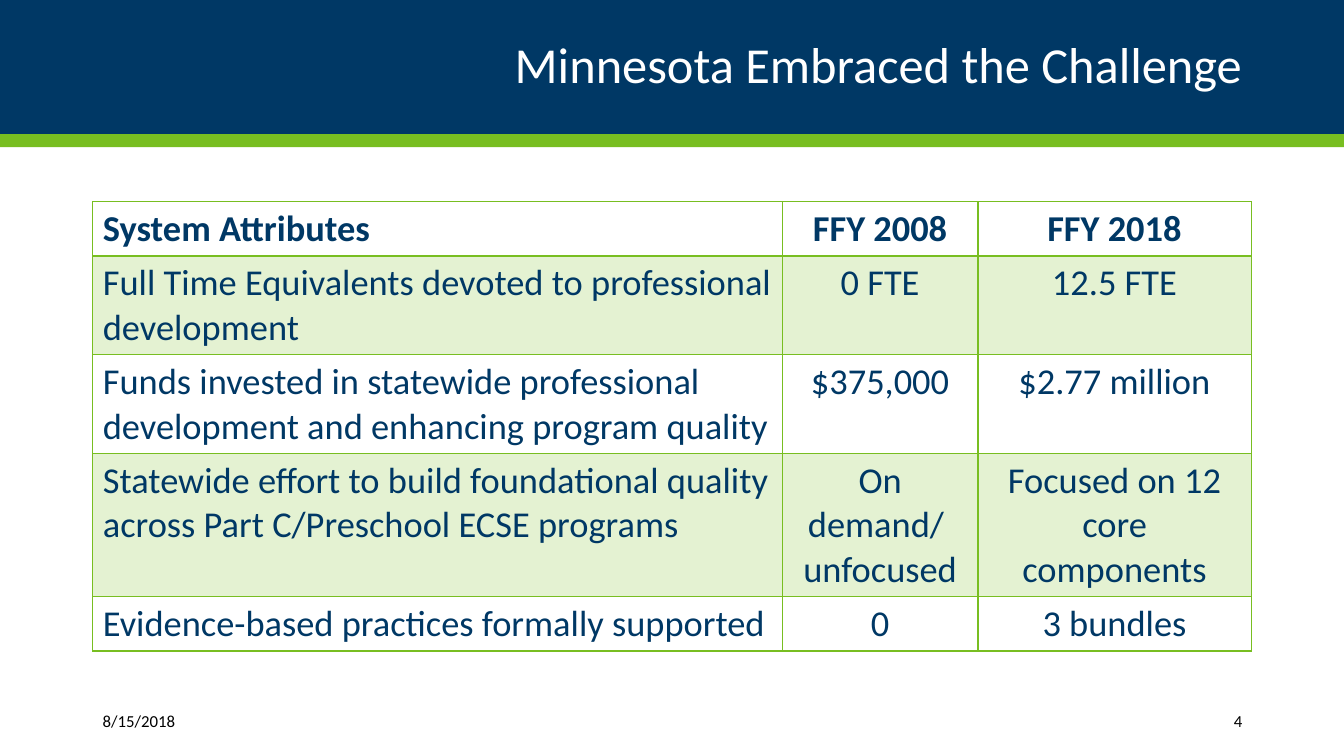
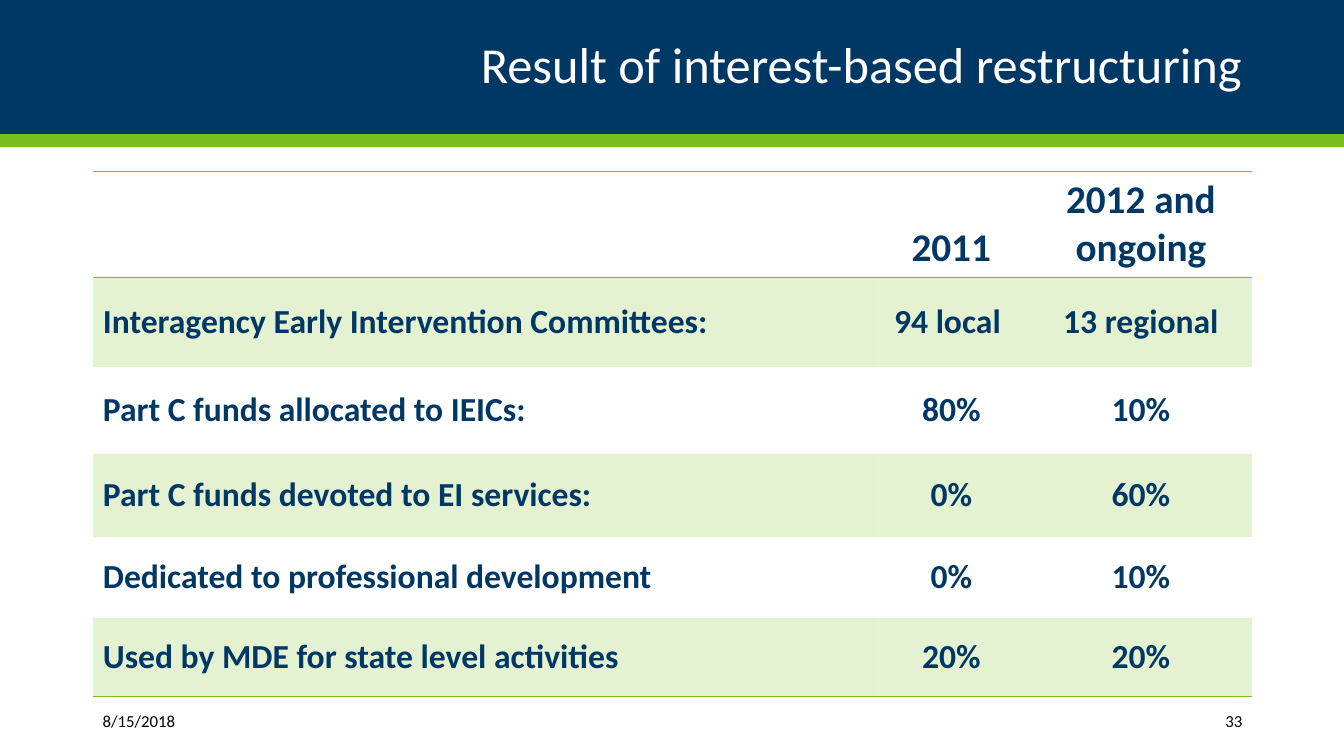
from lxml.etree import SubElement
from pptx import Presentation
from pptx.dml.color import RGBColor
from pptx.enum.shapes import MSO_SHAPE as Shape
from pptx.enum.text import MSO_ANCHOR as Anchor, PP_ALIGN as Align
from pptx.oxml.ns import qn
from pptx.util import Inches, Pt

# Shared look
NAVY = RGBColor(0x00, 0x38, 0x65)
GREEN = RGBColor(0x78, 0xBE, 0x21)
WHITE = RGBColor(0xFF, 0xFF, 0xFF)
BLACK = RGBColor(0x00, 0x00, 0x00)
FONT = "Calibri"
TINT = 20  # percent opacity of shaded rows
SLIDE_W, SLIDE_H = 13.33, 7.5
MARGIN, CONTENT_W = 0.92, 11.5
DATE = "8/15/2018"


def write_text(frame, text, size, color=NAVY, bold=False, align=Align.LEFT, spacing=None):
    """Fill a text frame, one paragraph per line of text."""
    frame.word_wrap = True
    for index, line in enumerate(text.split("\n")):
        paragraph = frame.paragraphs[0] if index == 0 else frame.add_paragraph()
        paragraph.alignment = align
        paragraph.line_spacing = spacing
        run = paragraph.add_run()
        run.text = line
        run.font.name = FONT
        run.font.size = Pt(size)
        run.font.bold = bold
        run.font.color.rgb = color


def add_label(slide, text, left, top, width, height, **text_format):
    frame = slide.shapes.add_textbox(*map(Inches, (left, top, width, height))).text_frame
    frame.vertical_anchor = Anchor.MIDDLE
    write_text(frame, text, **text_format)


def add_band(slide, top, height, color):
    band = slide.shapes.add_shape(Shape.RECTANGLE, 0, Inches(top), Inches(SLIDE_W), Inches(height))
    band.shadow.inherit = False
    band.fill.solid()
    band.fill.fore_color.rgb = color
    band.line.fill.background()


def add_framed_slide(deck, title, number):
    """Add a slide with the title bands and the footer."""
    slide = deck.slides.add_slide(deck.slide_layouts[6])
    add_band(slide, 0, 1.33, NAVY)
    add_band(slide, 1.33, 0.13, GREEN)
    add_label(slide, title, MARGIN, 0.17, CONTENT_W, 1,
              size=36, color=WHITE, align=Align.RIGHT, spacing=0.9)
    add_label(slide, DATE, MARGIN, 6.95, 1.49, 0.4, size=12, color=BLACK)
    add_label(slide, str(number), 10.82, 6.95, 1.6, 0.4,
              size=12, color=BLACK, align=Align.RIGHT)
    return slide


def set_borders(cell, left, right, top, bottom):
    """Draw cell edges at the given point widths; zero hides an edge."""
    properties = cell._tc.get_or_add_tcPr()
    for side, width in (("L", left), ("R", right), ("T", top), ("B", bottom)):
        edge = SubElement(properties, qn(f"a:ln{side}"), w=str(Pt(width)))
        if width:
            fill = SubElement(edge, qn("a:solidFill"))
            SubElement(fill, qn("a:srgbClr"), val=str(GREEN))
        else:
            SubElement(edge, qn("a:noFill"))


def shade(cell, tinted):
    if not tinted:
        cell.fill.background()
        return
    cell.fill.solid()
    cell.fill.fore_color.rgb = GREEN
    color = cell._tc.tcPr.find(f"{qn('a:solidFill')}/{qn('a:srgbClr')}")
    SubElement(color, qn("a:alpha"), val=str(TINT * 1000))


def add_comparison(slide, rows, top, widths, heights, rules, divider,
                   head_size, body_size, body_bold, head_anchor, body_anchor):
    """Add a table; rules are the widths of its horizontal lines, top to bottom."""
    table = slide.shapes.add_table(
        len(rows), len(widths), Inches(MARGIN), Inches(top),
        Inches(CONTENT_W), Inches(sum(heights))).table
    table.first_row = table.horz_banding = False
    for column, width in zip(table.columns, widths):
        column.width = Inches(width)
    for r, (texts, height) in enumerate(zip(rows, heights)):
        table.rows[r].height = Inches(height)
        is_head = r == 0
        for c, text in enumerate(texts):
            cell = table.cell(r, c)
            set_borders(cell, divider, divider, rules[r], rules[r + 1])
            shade(cell, r % 2 == 1)
            cell.vertical_anchor = head_anchor if is_head else body_anchor
            if text:
                write_text(cell.text_frame, text,
                           size=head_size if is_head else body_size,
                           bold=is_head or body_bold,
                           align=Align.CENTER if c else Align.LEFT)


def build_challenge(deck):
    slide = add_framed_slide(deck, "Minnesota Embraced the Challenge", 4)
    attributes = [
        ("System Attributes", "FFY 2008", "FFY 2018"),
        ("Full Time Equivalents devoted to professional development", "0 FTE", "12.5 FTE"),
        ("Funds invested in statewide professional development and enhancing program quality",
         "$375,000", "$2.77 million"),
        ("Statewide effort to build foundational quality across Part C/Preschool ECSE programs",
         "On demand/ \nunfocused", "Focused on 12 core components"),
        ("Evidence-based practices formally supported", "0", "3 bundles"),
    ]
    add_comparison(slide, attributes, top=2, widths=(6.84, 1.94, 2.71),
                   heights=(0.54, 0.98, 0.98, 1.42, 0.54),
                   rules=(1, 2, 1, 1, 1, 1), divider=1,
                   head_size=26, body_size=26, body_bold=False,
                   head_anchor=Anchor.TOP, body_anchor=Anchor.TOP)


def build_restructuring(deck):
    slide = add_framed_slide(deck, "Result of interest-based restructuring", 33)
    results = [
        ("", "2011", "2012 and ongoing"),
        ("Interagency Early Intervention Committees:", "94 local ", "13 regional"),
        ("Part C funds allocated to IEICs:", "80%", "10%"),
        ("Part C funds devoted to EI services:", "0%", "60%"),
        ("Dedicated to professional development", "0%", "10%"),
        ("Used by MDE for state level activities", "20%", "20%"),
    ]
    add_comparison(slide, results, top=1.7, widths=(7.74, 1.55, 2.21),
                   heights=(1.05, 0.89, 0.86, 0.83, 0.8, 0.78),
                   rules=(1, 1, 0, 0, 0, 0, 1), divider=0,
                   head_size=28, body_size=24, body_bold=True,
                   head_anchor=Anchor.BOTTOM, body_anchor=Anchor.MIDDLE)


def main():
    deck = Presentation()
    deck.slide_width, deck.slide_height = Inches(SLIDE_W), Inches(SLIDE_H)
    build_challenge(deck)
    build_restructuring(deck)
    deck.save("out.pptx")


if __name__ == "__main__":
    main()
